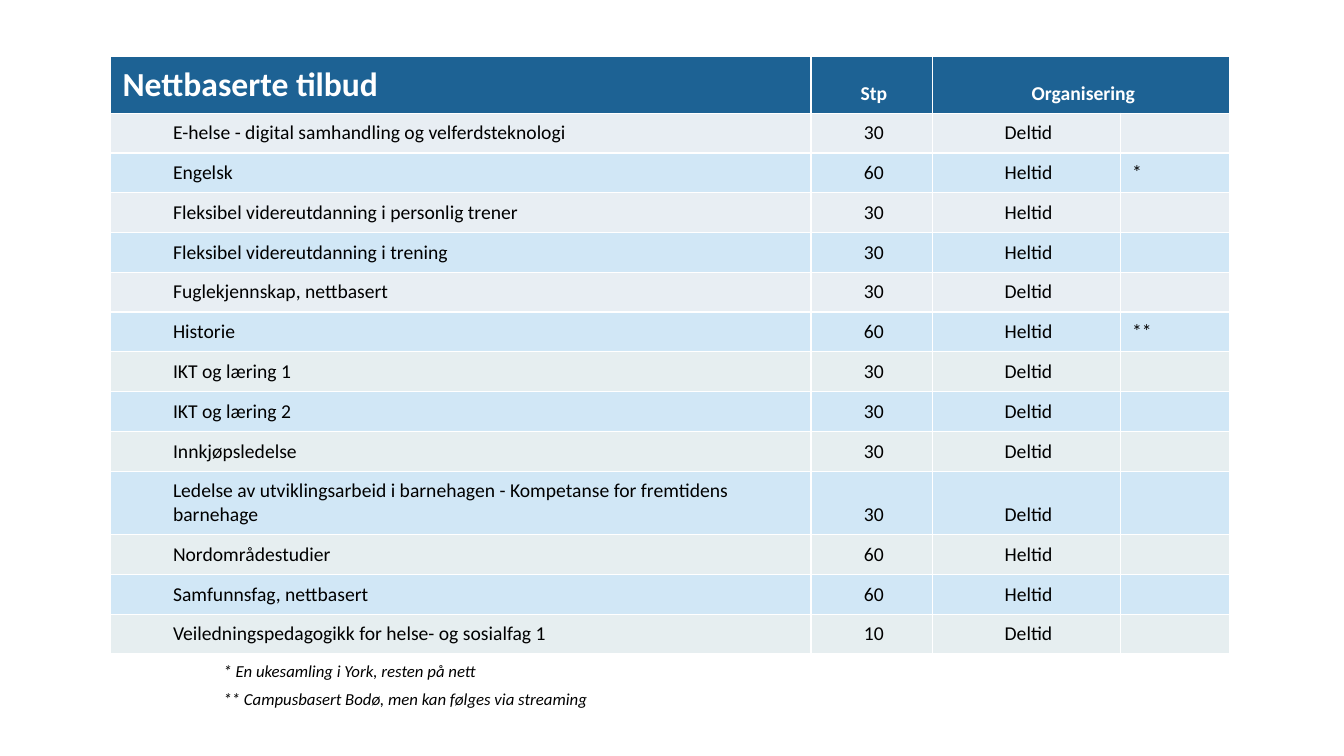
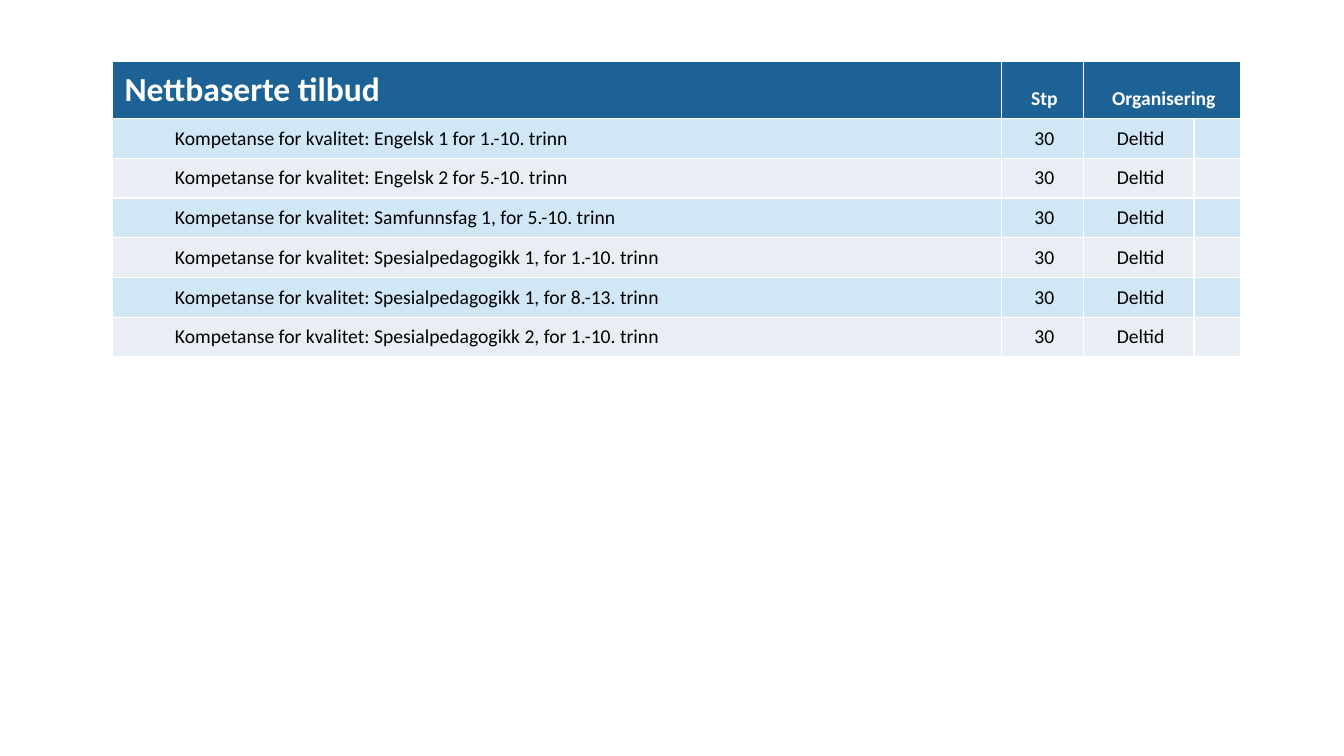
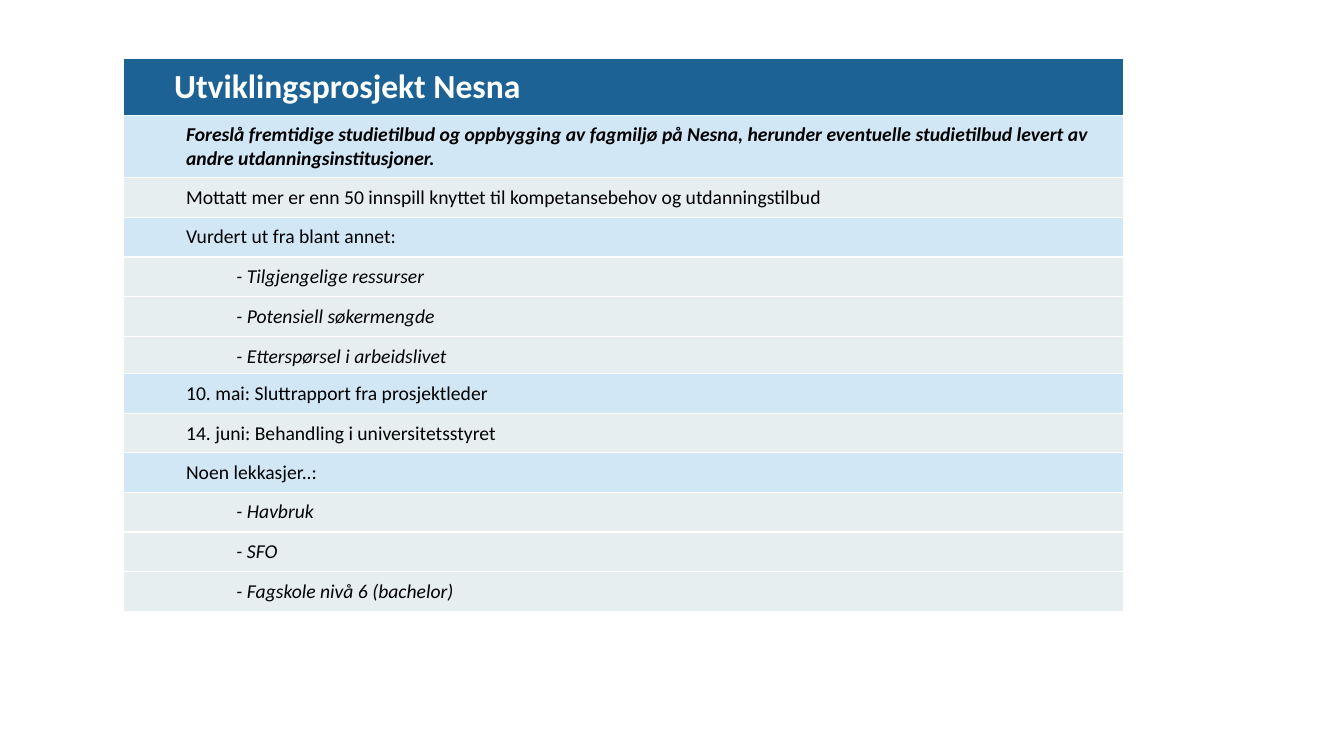
from dataclasses import dataclass
from math import ceil

from lxml import etree
from pptx import Presentation
from pptx.dml.color import RGBColor
from pptx.enum.text import MSO_ANCHOR, PP_ALIGN
from pptx.oxml.ns import qn
from pptx.util import Cm, Pt

LEFT, CENTER = PP_ALIGN.LEFT, PP_ALIGN.CENTER
BOTTOM = MSO_ANCHOR.BOTTOM
BLANK_LAYOUT = 6


@dataclass(frozen=True)
class Theme:
    font: str = "Calibri"
    header: str = "1D6294"
    blue: str = "D1E7F6"
    grey: str = "E8EEF3"
    green: str = "E6EEF0"
    white: str = "FFFFFF"
    black: str = "000000"
    heading_size: int = 24
    body_size: int = 14
    note_size: int = 12
    indent: float = 1.27
    char_width: float = 0.22
    line_height: float = 0.6


THEME = Theme()


@dataclass(frozen=True)
class RowStyle:
    fill: str | None
    level: int = 1
    height: float = 1.0
    color: str = THEME.black
    first_size: int = THEME.body_size
    size: int = THEME.body_size
    bold: bool = False
    italic: bool = False
    margins: tuple = (0.3, 0.2, 0.2, 0.2)  # left, top, right, bottom


HEADING = dict(fill=THEME.header, height=1.43, color=THEME.white,
               first_size=THEME.heading_size, bold=True)
FLUSH_RIGHT = (0.3, 0.2, 0, 0.2)

STYLES = {
    "header": RowStyle(level=0, **HEADING),
    "blue": RowStyle(THEME.blue),
    "grey": RowStyle(THEME.grey),
    "green": RowStyle(THEME.green),
    "note": RowStyle(None, level=2, height=0.71, first_size=THEME.note_size,
                     size=THEME.note_size, italic=True, margins=(0.3, 0.1, 0.2, 0)),
    "project": RowStyle(margins=(0, 0.2, 0, 0.2), **HEADING),
    "mandate": RowStyle(THEME.blue, bold=True, italic=True, margins=FLUSH_RIGHT),
    "topic": RowStyle(THEME.blue, margins=FLUSH_RIGHT),
    "fact": RowStyle(THEME.green, margins=FLUSH_RIGHT),
    "detail": RowStyle(THEME.green, level=2, italic=True, margins=FLUSH_RIGHT),
}

COURSE_HEADER = ("header", "Nettbaserte tilbud", "Stp", "Organisering", "")

ONLINE_COURSES = [
    COURSE_HEADER,
    ("grey", "E-helse - digital samhandling og velferdsteknologi", "30", "Deltid", ""),
    ("blue", "Engelsk", "60", "Heltid", "*"),
    ("grey", "Fleksibel videreutdanning i personlig trener", "30", "Heltid", ""),
    ("blue", "Fleksibel videreutdanning i trening", "30", "Heltid", ""),
    ("grey", "Fuglekjennskap, nettbasert", "30", "Deltid", ""),
    ("blue", "Historie", "60", "Heltid", "**"),
    ("green", "IKT og læring 1", "30", "Deltid", ""),
    ("blue", "IKT og læring 2", "30", "Deltid", ""),
    ("green", "Innkjøpsledelse", "30", "Deltid", ""),
    ("blue", "Ledelse av utviklingsarbeid i barnehagen - Kompetanse for fremtidens barnehage",
     "30", "Deltid", ""),
    ("green", "Nordområdestudier", "60", "Heltid", ""),
    ("blue", "Samfunnsfag, nettbasert", "60", "Heltid", ""),
    ("green", "Veiledningspedagogikk for helse- og sosialfag 1", "10", "Deltid", ""),
    ("note", "* En ukesamling i York, resten på nett", "", "", ""),
    ("note", "** Campusbasert Bodø, men kan følges via streaming", "", "", ""),
]

QUALITY_SUBJECTS = [
    "Engelsk 1 for 1.-10. trinn",
    "Engelsk 2 for 5.-10. trinn",
    "Samfunnsfag 1, for 5.-10. trinn",
    "Spesialpedagogikk 1, for 1.-10. trinn",
    "Spesialpedagogikk 1, for 8.-13. trinn",
    "Spesialpedagogikk 2, for 1.-10. trinn",
]
QUALITY_COURSES = [COURSE_HEADER] + [
    (("blue", "grey")[index % 2], f"Kompetanse for kvalitet: {subject}", "30", "Deltid", "")
    for index, subject in enumerate(QUALITY_SUBJECTS)
]

PROJECT_PARTS = [
    (1.47, [
        ("project", "Utviklingsprosjekt Nesna"),
        ("mandate", "Foreslå fremtidige studietilbud og oppbygging av fagmiljø på Nesna, "
                    "herunder eventuelle studietilbud levert av andre utdanningsinstitusjoner."),
    ]),
    (4.47, [
        ("fact", "Mottatt mer er enn 50 innspill knyttet til kompetansebehov og utdanningstilbud"),
        ("topic", "Vurdert ut fra blant annet:"),
        ("detail", "- Tilgjengelige ressurser"),
        ("detail", "- Potensiell søkermengde"),
        ("detail", "- Etterspørsel i arbeidslivet"),
    ]),
    (9.42, [
        ("topic", "10. mai: Sluttrapport fra prosjektleder"),
        ("fact", "14. juni: Behandling i universitetsstyret"),
    ]),
    (11.4, [
        ("topic", "Noen lekkasjer..:"),
        ("detail", "- Havbruk"),
        ("detail", "- SFO"),
        ("detail", "- Fagskole nivå 6 (bachelor)"),
    ]),
]

# Each slide is a list of tables: left, top, column widths, rows.
SLIDES = [
    [(2.79, 1.42, (17.65, 3.07, 4.72, 2.77), ONLINE_COURSES)],
    [(2.84, 1.55, (22.4, 2.06, 2.79, 1.17), QUALITY_COURSES)],
    [(3.12, top, (25.2,), rows) for top, rows in PROJECT_PARTS],
]


def row_height(style, text, width):
    """Height in cm, with room for the lines that the first cell wraps to."""
    room = width - style.margins[0] - style.margins[2] - style.level * THEME.indent
    lines = ceil(len(text) * THEME.char_width / room)
    return style.height + (lines - 1) * THEME.line_height


def add_borders(cell):
    properties = cell._tc.get_or_add_tcPr()
    for side in ("a:lnL", "a:lnR", "a:lnT", "a:lnB"):
        line = etree.SubElement(properties, qn(side), w=str(Pt(1)))
        fill = etree.SubElement(line, qn("a:solidFill"))
        etree.SubElement(fill, qn("a:srgbClr"), val=THEME.white)


def format_cell(cell, text, style, column):
    add_borders(cell)
    if style.fill:
        cell.fill.solid()
        cell.fill.fore_color.rgb = RGBColor.from_string(style.fill)
    else:
        cell.fill.background()
    cell.vertical_anchor = BOTTOM
    margins = style.margins if text else (0, 0, 0, 0)
    (cell.margin_left, cell.margin_top,
     cell.margin_right, cell.margin_bottom) = (Cm(margin) for margin in margins)

    para = cell.text_frame.paragraphs[0]
    para.text = text
    para.alignment = CENTER if column in (1, 2) else LEFT
    if column == 0 and style.level:
        para.level = style.level
        indents = para._p.get_or_add_pPr()
        indents.set("marL", str(Cm(style.level * THEME.indent)))
        indents.set("indent", "0")
    font = para.font
    font.name = THEME.font
    font.size = Pt(style.size if column else style.first_size)
    font.bold = style.bold
    font.italic = style.italic
    font.color.rgb = RGBColor.from_string(style.color)


def add_styled_table(page, left, top, widths, rows):
    styles = [STYLES[name] for name, *_ in rows]
    heights = [row_height(style, row[1], widths[0]) for style, row in zip(styles, rows)]
    table = page.shapes.add_table(len(rows), len(widths), Cm(left), Cm(top),
                                  Cm(sum(widths)), Cm(sum(heights))).table
    table.first_row = False
    table.horz_banding = False
    for column, width in zip(table.columns, widths):
        column.width = Cm(width)
    for index, (style, (_, *texts)) in enumerate(zip(styles, rows)):
        table.rows[index].height = Cm(heights[index])
        for column, text in enumerate(texts):
            format_cell(table.cell(index, column), text, style, column)
    if rows[0] == COURSE_HEADER:
        table.cell(0, 2).merge(table.cell(0, 3))


def main():
    deck = Presentation()
    deck.slide_width, deck.slide_height = Cm(33.87), Cm(19.05)
    for tables in SLIDES:
        page = deck.slides.add_slide(deck.slide_layouts[BLANK_LAYOUT])
        for table in tables:
            add_styled_table(page, *table)
    deck.save("out.pptx")


if __name__ == "__main__":
    main()
